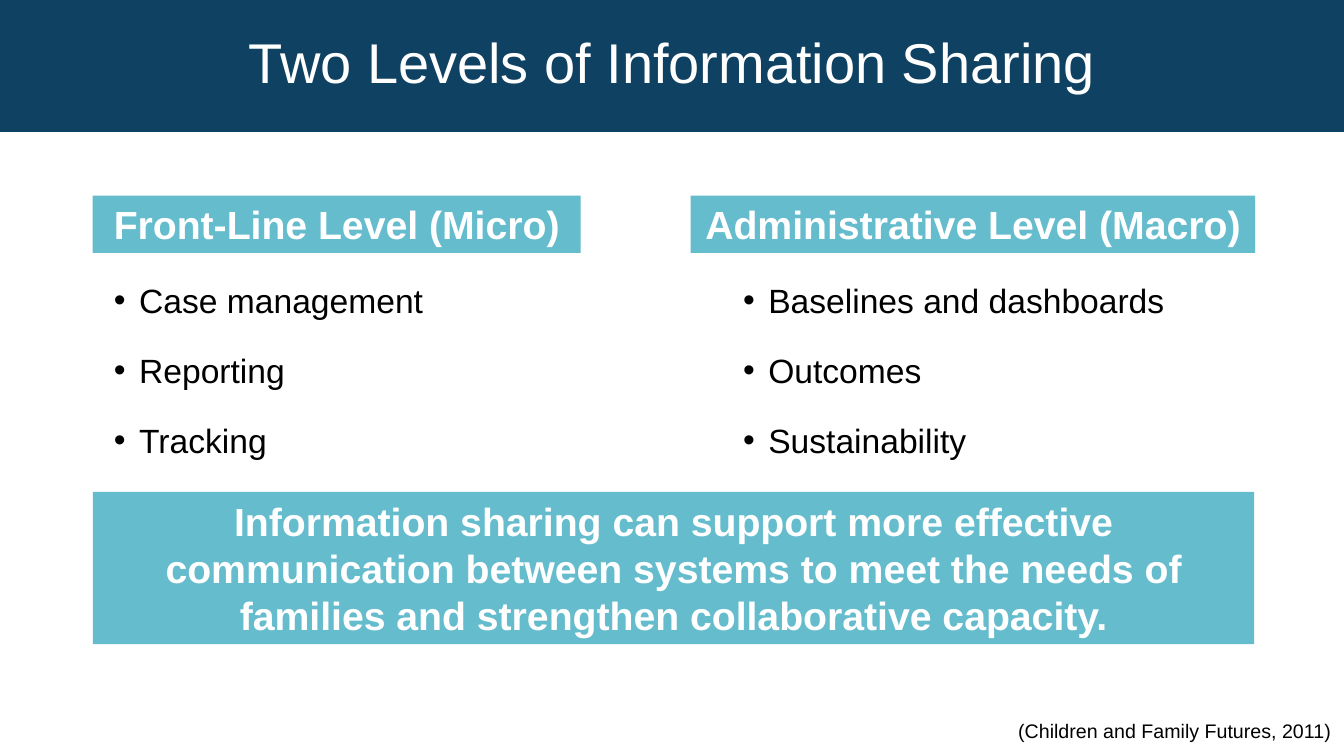
import dataclasses
from typing import Any

import pptx
import pptx.dml.color
import pptx.enum.shapes
import pptx.enum.text
import pptx.oxml.ns
import pptx.util
from lxml import etree

Inches = pptx.util.Inches
Pt = pptx.util.Pt
Align = pptx.enum.text.PP_ALIGN
Anchor = pptx.enum.text.MSO_ANCHOR

NAVY = "0F4162"
TEAL = "65BCCD"
WHITE = "FFFFFF"
BLACK = "000000"
LEFT = 0.92
BANNER_WIDTH = 11.52


@dataclasses.dataclass(frozen=True)
class Box:
    left: float
    top: float
    width: float
    height: float


@dataclasses.dataclass(frozen=True)
class Banner:
    text: str
    box: Box


@dataclasses.dataclass(frozen=True)
class BulletList:
    placeholder: int
    items: tuple[str, ...]
    box: Box


BANNERS = (
    Banner("Front-Line Level (Micro)", Box(LEFT, 1.94, 4.84, 0.57)),
    Banner("Administrative Level (Macro)", Box(6.85, 1.94, 5.6, 0.57)),
    Banner(
        "Information sharing can support more effective communication between "
        "systems to meet the needs of families and strengthen collaborative capacity.",
        Box(LEFT, 4.88, BANNER_WIDTH, 1.51),
    ),
)
LISTS = (
    BulletList(1, ("Case management", "Reporting", "Tracking"), Box(LEFT, 2.71, 4.36, 2.71)),
    BulletList(
        2,
        ("Baselines and dashboards", "Outcomes", "Sustainability"),
        Box(7.16, 2.71, 4.88, 1.96),
    ),
)


def apply(target: Any, values: dict[str, Any]) -> None:
    for name, value in values.items():
        setattr(target, name, value)


def colour(target: Any, value: str) -> None:
    target.rgb = pptx.dml.color.RGBColor.from_string(value)


def fill(shape: Any, value: str) -> None:
    shape.fill.solid()
    colour(shape.fill.fore_color, value)


def place(shape: Any, box: Box) -> None:
    apply(shape, {name: Inches(value) for name, value in dataclasses.asdict(box).items()})


def write(paragraph: Any, text: str, size: int, value: str, bold: bool = False) -> None:
    run = paragraph.add_run()
    run.text = text
    apply(run.font, {"name": "Arial", "size": Pt(size), "bold": bold})
    colour(run.font.color, value)


def frame_of(shape: Any, **values: Any) -> Any:
    frame = shape.text_frame
    defaults = {"word_wrap": True, "auto_size": pptx.enum.text.MSO_AUTO_SIZE.NONE}
    apply(frame, defaults | values)
    return frame


def add_bullet(paragraph: Any) -> None:
    properties = paragraph._p.get_or_add_pPr()
    apply_indent = {"marL": Inches(0.25), "indent": Inches(-0.25)}
    for name, value in apply_indent.items():
        properties.set(name, str(value))
    for tag, name, value in (("a:buFont", "typeface", "Arial"), ("a:buChar", "char", "•")):
        etree.SubElement(properties, pptx.oxml.ns.qn(tag)).set(name, value)


def draw_title(slide: Any, text: str) -> None:
    title = slide.shapes.title
    place(title, Box(0, 0, 13.33, 1.3))
    fill(title, NAVY)
    colour(title.line.color, NAVY)
    title.line.width = Pt(1)
    paragraph = frame_of(title, vertical_anchor=Anchor.MIDDLE).paragraphs[0]
    apply(paragraph, {"alignment": Align.CENTER, "line_spacing": 0.9})
    write(paragraph, text, 40, WHITE)


def draw_list(slide: Any, bullet_list: BulletList) -> None:
    body = slide.placeholders[bullet_list.placeholder]
    place(body, bullet_list.box)
    fill(body, WHITE)
    frame = frame_of(
        body,
        vertical_anchor=Anchor.TOP,
        margin_left=Inches(0.21),
        margin_right=Inches(0.25),
        margin_top=Inches(0.07),
        margin_bottom=Inches(0.04),
    )
    for index, item in enumerate(bullet_list.items):
        paragraph = frame.add_paragraph() if index else frame.paragraphs[0]
        add_bullet(paragraph)
        spacing = {"space_before": Pt(10 if index else 0), "space_after": Pt(11)}
        apply(paragraph, spacing | {"alignment": Align.LEFT, "line_spacing": 1.0})
        write(paragraph, item, 24, BLACK)


def draw_banner(slide: Any, banner: Banner) -> None:
    shape = slide.shapes.add_shape(pptx.enum.shapes.MSO_SHAPE.RECTANGLE, 0, 0, 0, 0)
    place(shape, banner.box)
    fill(shape, TEAL)
    shape.line.fill.background()
    shape.shadow.inherit = False
    paragraph = frame_of(shape, vertical_anchor=Anchor.TOP).paragraphs[0]
    paragraph.alignment = Align.CENTER
    write(paragraph, banner.text, 28, WHITE, bold=True)


def draw_citation(slide: Any, text: str) -> None:
    shape = slide.shapes.add_textbox(0, 0, 0, 0)
    place(shape, Box(10, 7.08, 3.33, 0.34))
    write(frame_of(shape).paragraphs[0], text, 14, BLACK)


def main() -> None:
    presentation = pptx.Presentation()
    apply(presentation, {"slide_width": Inches(13.33), "slide_height": Inches(7.5)})
    slide = presentation.slides.add_slide(presentation.slide_layouts[3])
    draw_title(slide, "Two Levels of Information Sharing")
    for bullet_list in LISTS:
        draw_list(slide, bullet_list)
    for banner in BANNERS:
        draw_banner(slide, banner)
    draw_citation(slide, "(Children and Family Futures, 2011)")
    presentation.save("out.pptx")


if __name__ == "__main__":
    main()
